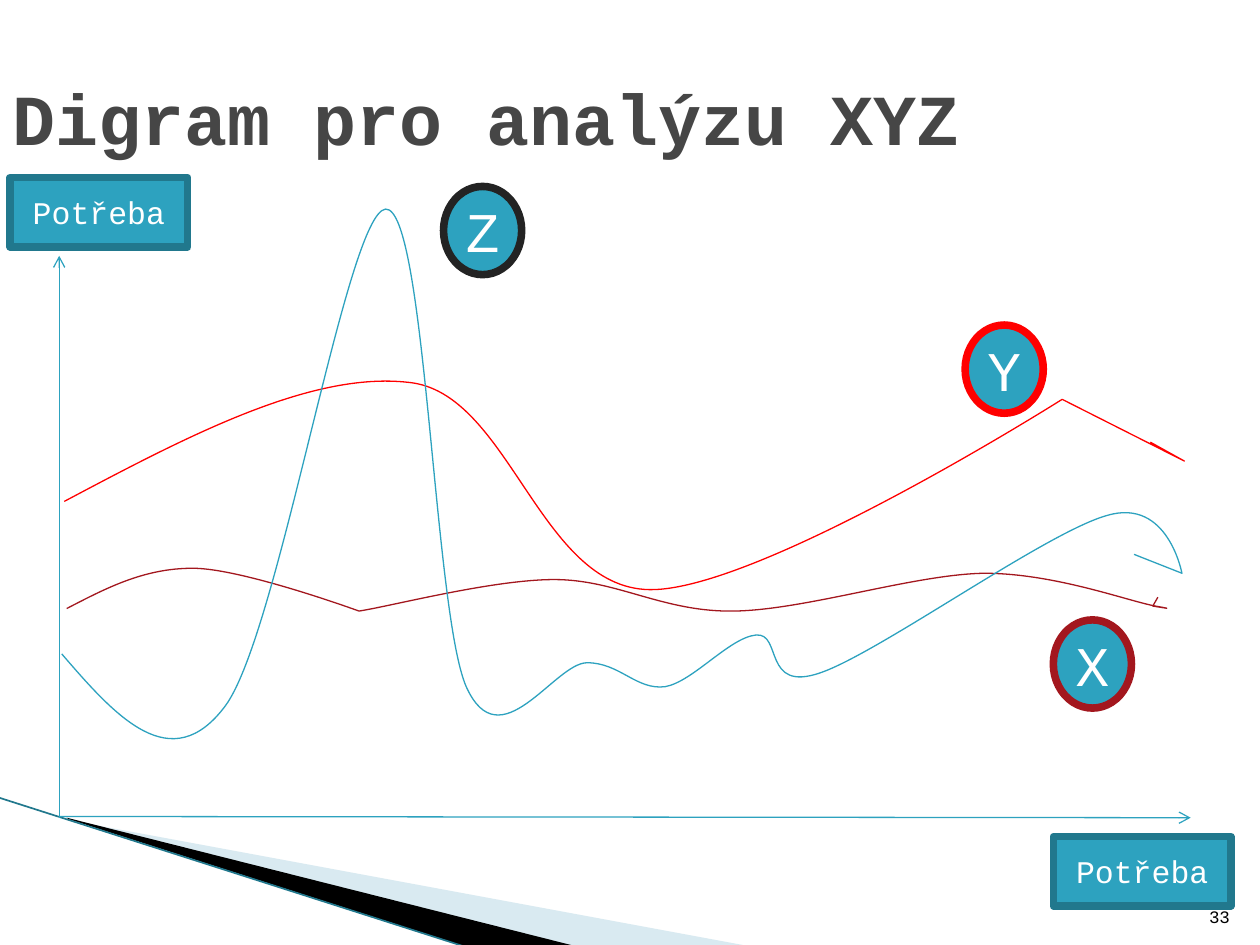
import pptx
import pptx.dml.color
import pptx.enum.shapes
import pptx.enum.text
import pptx.oxml
import pptx.oxml.ns
import pptx.util

RGB = pptx.dml.color.RGBColor
SHAPE = pptx.enum.shapes.MSO_SHAPE
ALIGN = pptx.enum.text.PP_ALIGN
ANCHOR = pptx.enum.text.MSO_ANCHOR

EMU_PER_PX = 9144
FONT = "Courier New"

WHITE = RGB(0xFF, 0xFF, 0xFF)
BLACK = RGB(0x00, 0x00, 0x00)
TITLE_GRAY = RGB(0x46, 0x46, 0x46)
TEAL = RGB(0x2D, 0xA2, 0xBF)
DARK_TEAL = RGB(0x21, 0x78, 0x8D)
PALE_BLUE = RGB(0xA0, 0xCB, 0xDC)
CHARCOAL = RGB(0x23, 0x23, 0x23)
RED = RGB(0xFF, 0x00, 0x00)
DARK_RED = RGB(0xA3, 0x17, 0x1E)

WEDGES = [
    ([(55, 651), (595, 751), (456, 751), (55, 650)], PALE_BLUE, 40),
    ([(53, 649), (457, 751), (372, 752), (54, 650)], BLACK, 100),
]
AXES = [((47, 648), (945, 649)), ((47, 649), (47, 203))]
AXIS_LABELS = [(8, 141), (836, 664)]
BADGES = [
    ("X", 836, 492, DARK_RED),
    ("Y", 766, 258, RED),
    ("Z", 352, 148, CHARCOAL),
]
DEMAND_CURVES = [
    (DARK_RED, (53, 483), [
        (84, 467, 114, 451, 153, 451), (192, 451, 285, 485, 285, 485),
        (285, 485), (311, 481, 391, 460, 440, 460),
        (490, 460, 526, 486, 583, 485), (640, 484, 725, 456, 781, 455),
        (837, 455, 895, 477, 917, 481), (939, 485, 915, 481, 915, 481),
        (915, 481), (919, 474)]),
    (RED, (51, 398), [
        (151, 345, 250, 293, 328, 304), (405, 316, 429, 466, 515, 468),
        (601, 470, 843, 317, 843, 317), (843, 317), (940, 366), (940, 366),
        (913, 351)]),
    (TEAL, (49, 519), [
        (92, 569, 136, 618, 179, 560), (222, 501, 275, 169, 306, 166),
        (338, 164, 344, 485, 370, 545), (397, 605, 440, 526, 466, 526),
        (492, 526, 505, 548, 528, 545), (550, 541, 579, 506, 600, 504),
        (621, 502, 605, 550, 651, 534), (698, 518, 831, 422, 879, 409),
        (927, 395, 938, 455, 938, 455), (938, 455), (900, 440), (900, 440)]),
]


def px(value):
    return pptx.util.Emu(value * EMU_PER_PX)


def drawing_element(tag, attributes=""):
    return pptx.oxml.parse_xml(
        f'<a:{tag} {pptx.oxml.ns.nsdecls("a")} {attributes}/>')


def apply_format(target, values):
    for name, value in values.items():
        setattr(target, name, value)


def write_text(box, text, size, color, align, anchor, bold=False):
    frame = box.text_frame
    apply_format(frame, {"word_wrap": True, "vertical_anchor": anchor})
    para = frame.paragraphs[0]
    para.alignment = align
    span = para.add_run()
    span.text = text
    apply_format(span.font, {"name": FONT, "size": pptx.util.Pt(size), "bold": bold})
    span.font.color.rgb = color


def set_line(line, color, width):
    line.color.rgb = color
    line.width = pptx.util.Pt(width)


def add_title(page, text):
    title = page.shapes.title
    apply_format(title, {"left": px(0), "top": px(30), "width": px(900), "height": px(125)})
    write_text(title, text, 41, TITLE_GRAY, ALIGN.LEFT, ANCHOR.MIDDLE, True)


def add_page_number(page, number):
    box = page.shapes.add_textbox(px(946), px(701), px(40), px(40))
    write_text(box, number, 10, BLACK, ALIGN.RIGHT, ANCHOR.BOTTOM)


def add_label(page, kind, place, text, size, border):
    shape = page.shapes.add_shape(kind, *map(px, place))
    shape.shadow.inherit = False
    shape.fill.solid()
    shape.fill.fore_color.rgb = TEAL
    set_line(shape.line, border, 4.33)
    for side in ("left", "right", "top", "bottom"):
        setattr(shape.text_frame, f"margin_{side}", 0)
    write_text(shape, text, size, WHITE, ALIGN.CENTER, ANCHOR.MIDDLE)


def add_line(page, start, end, color, width, arrow=False):
    kind = pptx.enum.shapes.MSO_CONNECTOR.STRAIGHT
    connector = page.shapes.add_connector(kind, *map(px, start + end))
    set_line(connector.line, color, width)
    if arrow:
        connector.line._get_or_add_ln().append(drawing_element("tailEnd", 'type="arrow"'))
    connector._element.spPr.append(drawing_element("effectLst"))


def add_outline(page, points, close):
    start, *rest = [(px(x), px(y)) for x, y in points]
    builder = page.shapes.build_freeform(*start, scale=1.0)
    builder.add_line_segments(rest, close=close)
    outline = builder.convert_to_shape()
    outline.shadow.inherit = False
    return outline


def add_wedge(page, points, color, opacity):
    wedge = add_outline(page, points, True)
    wedge.fill.solid()
    wedge.fill.fore_color.rgb = color
    wedge.line.fill.background()
    if opacity < 100:
        alpha = drawing_element("alpha", f'val="{opacity * 1000}"')
        wedge._element.spPr.find(".//" + pptx.oxml.ns.qn("a:srgbClr")).append(alpha)


def bend_segments(outline, segments):
    spans = iter(outline._element.spPr.findall(".//" + pptx.oxml.ns.qn("a:lnTo")))
    for segment in segments:
        lines = [next(spans) for _ in segment[::2]]
        if len(lines) == 3:
            bend = drawing_element("cubicBezTo")
            lines[0].addprevious(bend)
            for line in lines:
                bend.append(line[0])
                line.getparent().remove(line)


def add_curve(page, color, start, segments):
    points = [start]
    for segment in segments:
        points += zip(segment[::2], segment[1::2])
    curve = add_outline(page, points, False)
    bend_segments(curve, segments)
    curve.fill.background()
    set_line(curve.line, color, 0.75)


def main():
    deck = pptx.Presentation()
    apply_format(deck, {"slide_width": px(1000), "slide_height": px(750)})
    page = deck.slides.add_slide(deck.slide_layouts[5])
    for wedge in WEDGES:
        add_wedge(page, *wedge)
    add_line(page, (-1, 633), (371, 752), DARK_TEAL, 0.95)
    add_page_number(page, "33")
    add_title(page, "Digram pro analýzu XYZ")
    for start, end in AXES:
        add_line(page, start, end, TEAL, 0.75, True)
    for left, top in AXIS_LABELS:
        add_label(page, SHAPE.RECTANGLE, (left, top, 141, 55), "Potřeba", 18, DARK_TEAL)
    for curve in DEMAND_CURVES:
        add_curve(page, *curve)
    for letter, left, top, border in BADGES:
        add_label(page, SHAPE.OVAL, (left, top, 62, 70), letter, 32, border)
    deck.save("out.pptx")


if __name__ == "__main__":
    main()
